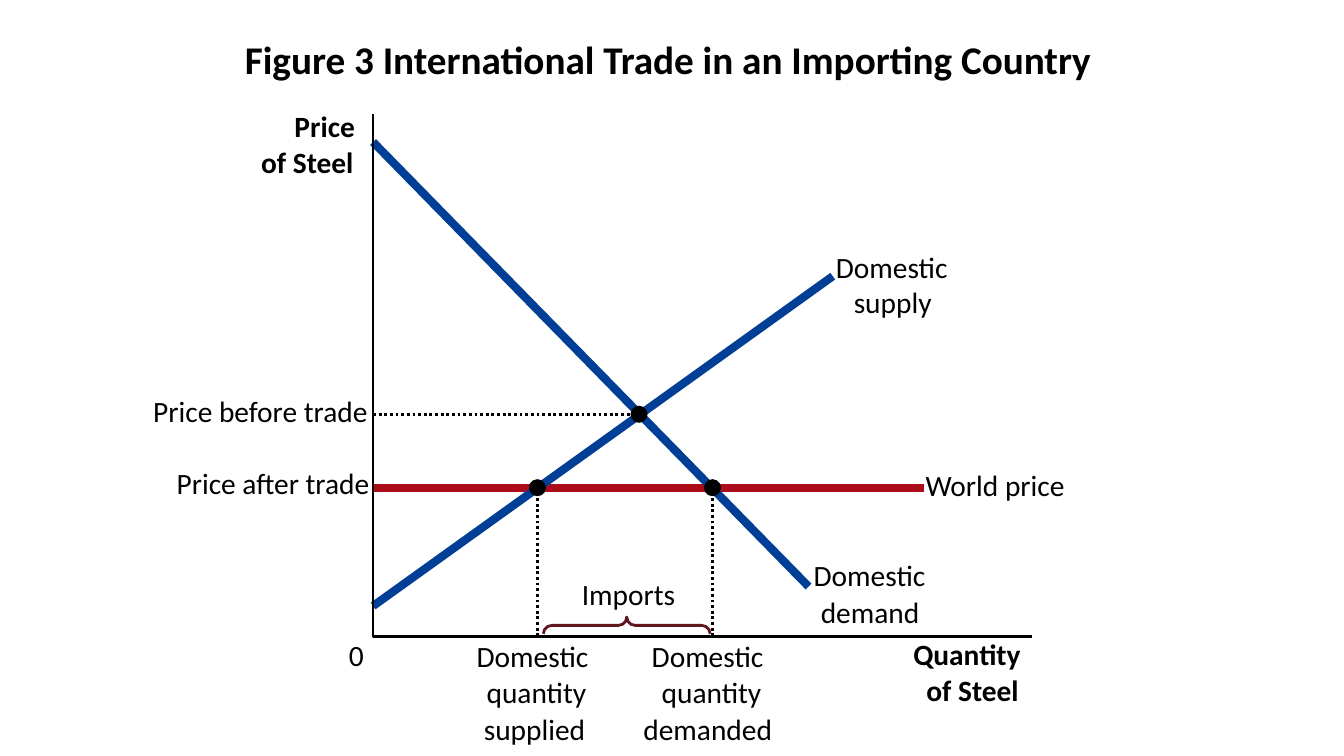
from pptx import Presentation
from pptx.dml.color import RGBColor
from pptx.enum.dml import MSO_LINE
from pptx.enum.shapes import MSO_CONNECTOR, MSO_SHAPE
from pptx.enum.text import MSO_ANCHOR, MSO_AUTO_SIZE
from pptx.oxml.ns import qn
from pptx.util import Cm, Pt
from lxml import etree

STRAIGHT = MSO_CONNECTOR.STRAIGHT
DOTTED = MSO_LINE.ROUND_DOT
OVAL, LEFT_BRACE = MSO_SHAPE.OVAL, MSO_SHAPE.LEFT_BRACE
MIDDLE, TOP = MSO_ANCHOR.MIDDLE, MSO_ANCHOR.TOP
GROW, FIXED = MSO_AUTO_SIZE.SHAPE_TO_FIT_TEXT, MSO_AUTO_SIZE.NONE
COLORS = {name: RGBColor.from_string(value) for name, value in {
    "black": "000000", "curve": "003F95", "world": "AD0D1B", "brace": "5F161D"}.items()}

deck = Presentation()
deck.slide_width, deck.slide_height = Cm(33.86), Cm(19.05)
page = deck.slides.add_slide(deck.slide_layouts[6])


def add_text(text, left, top, width, height=0.89, size=21, bold=False, inset=0,
             anchor=TOP, wrap=False, fit=GROW, spacing=1.0):
    box = page.shapes.add_textbox(Cm(left), Cm(top), Cm(width), Cm(height))
    frame = box.text_frame
    frame.margin_left = frame.margin_right = Cm(inset)
    frame.margin_top = frame.margin_bottom = 0
    frame.word_wrap = wrap
    frame.auto_size = fit
    frame.vertical_anchor = anchor
    para = frame.paragraphs[0]
    para.line_spacing = spacing
    span = para.add_run()
    span.text = text
    span.font.name, span.font.size, span.font.bold = "Calibri", Pt(size), bold
    span.font.color.rgb = COLORS["black"]


def add_line(start, end, color="black", width=2, dash=None):
    line = page.shapes.add_connector(STRAIGHT, *(Cm(value) for value in (*start, *end)))
    line.line.color.rgb = COLORS[color]
    line.line.width = Pt(width)
    if dash:
        line.line.dash_style = dash
    etree.SubElement(line._element.spPr, qn("a:effectLst"))


# Chart geometry
axis_x, axis_y = 9.4, 16.03
world_y = 12.29
supplied_x, demanded_x = 13.54, 17.95
balance_x, balance_y = 16.1, 10.44
dot = 0.43

# Title
add_text("Figure 3 International Trade in an Importing Country", 5.92, 0.64, 22.86,
         height=1.9, size=28, bold=True, inset=0.25, anchor=MIDDLE, wrap=True,
         fit=FIXED, spacing=0.8)

# World price, supply and demand
add_line((axis_x, world_y), (23.27, world_y), color="world", width=5.88)
add_line((axis_x, 15.27), (20.98, 6.96), color="curve", width=5.88)
add_line((axis_x, 3.58), (20.37, 14.78), color="curve", width=5.88)

# Imports brace, turned so that its tip points up
brace_width, brace_height = 0.42, 4.2
brace = page.shapes.add_shape(LEFT_BRACE, Cm(15.79 - brace_width / 2),
                              Cm(15.76 - brace_height / 2), Cm(brace_width), Cm(brace_height))
brace.rotation = 90
brace.adjustments[0] = 0.5
brace.shadow.inherit = False
brace.fill.background()
brace.line.color.rgb = COLORS["brace"]
brace.line.width = Pt(2)

# Axes
builder = page.shapes.build_freeform(Cm(axis_x), Cm(2.87))
builder.add_line_segments([(Cm(axis_x), Cm(axis_y)), (Cm(26.01), Cm(axis_y))], close=False)
axes = builder.convert_to_shape()
axes.shadow.inherit = False
axes.fill.background()
axes.line.color.rgb = COLORS["black"]
axes.line.width = Pt(2)

# Dotted guides, each ending at a marked point
for point, foot in (
    ((supplied_x, world_y), (supplied_x, axis_y)),
    ((demanded_x, world_y), (demanded_x, axis_y)),
    ((balance_x, balance_y), (axis_x, balance_y)),
):
    add_line(foot, point, dash=DOTTED)
    marker = page.shapes.add_shape(OVAL, Cm(point[0] - dot / 2), Cm(point[1] - dot / 2),
                                   Cm(dot), Cm(dot))
    marker.shadow.inherit = False
    marker.fill.solid()
    marker.fill.fore_color.rgb = COLORS["black"]
    marker.line.fill.background()

# Axis names
for text, left, top, width in (
    ("Price", 7.42, 2.72, 1.6),
    ("of Steel", 6.58, 3.63, 2.4),
    ("Quantity", 23.01, 16.03, 2.8),
    ("of Steel", 23.34, 16.94, 2.4),
):
    add_text(text, left, top, width, bold=True)

# Labels of prices and curves
for text, left, top, width in (
    ("0", 8.79, 16.05, 0.4),
    ("Price before trade", 3.86, 9.91, 5.46),
    ("Price after trade", 4.45, 11.71, 4.93),
    ("World price", 23.32, 11.76, 3.56),
    ("Domestic", 21.06, 6.27, 2.84),
    ("supply", 21.51, 7.16, 1.98),
    ("Domestic", 20.5, 14.05, 2.84),
    ("demand", 20.68, 14.96, 2.49),
    ("Imports", 14.66, 14.53, 2.46),
):
    add_text(text, left, top, width)

# Labels below the quantity axis
for quantity_x, text, left, width in (
    (supplied_x, "supplied", 12.19, 2.59),
    (demanded_x, "demanded", 16.21, 3.28),
):
    add_text("Domestic", quantity_x - 1.53, 16.08, 2.84)
    add_text("quantity", quantity_x - 1.28, 16.99, 2.59)
    add_text(text, left, 17.91, width)

deck.save("out.pptx")
